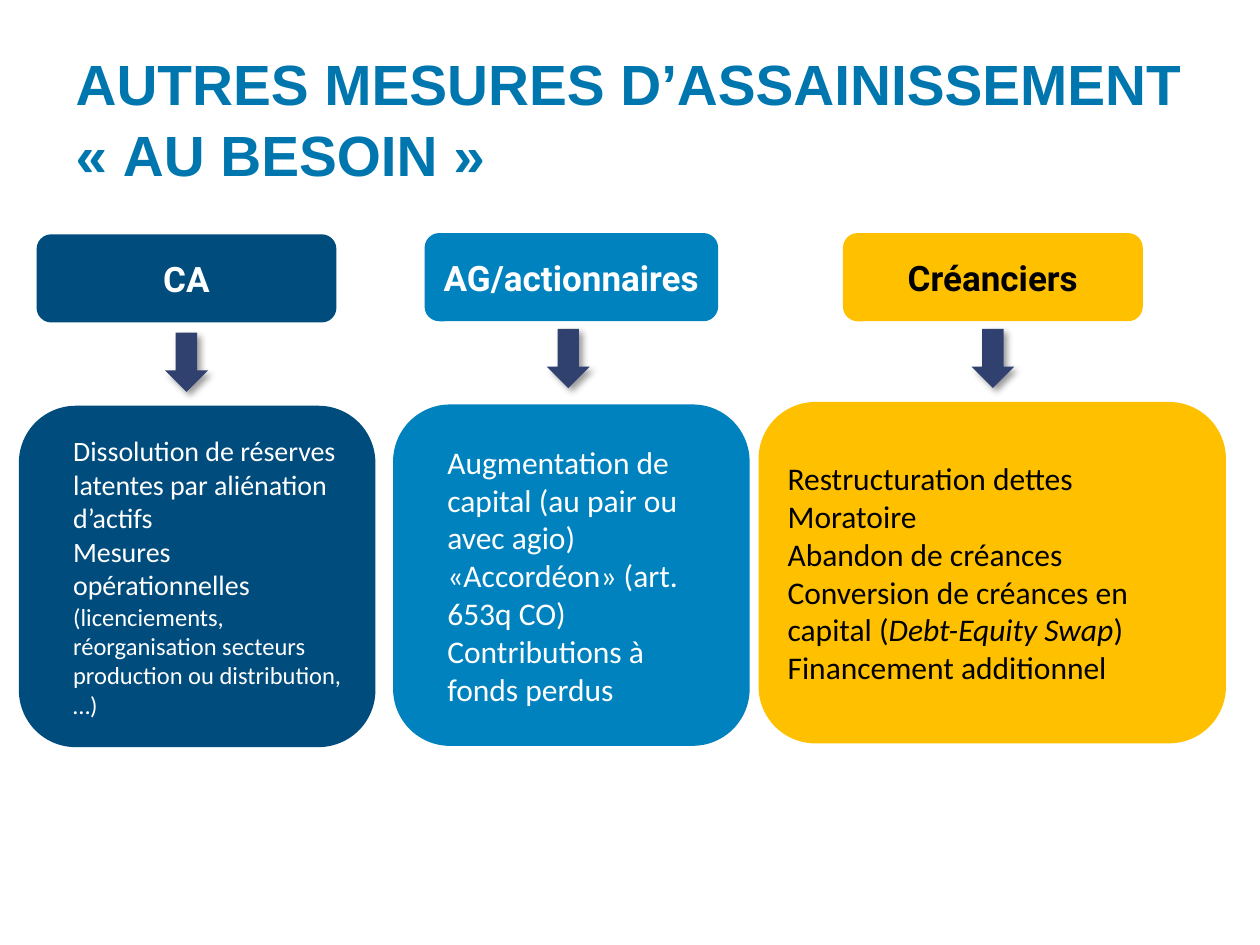
from lxml.etree import SubElement
from pptx import Presentation
from pptx.dml.color import RGBColor
from pptx.enum.shapes import MSO_SHAPE as Shape
from pptx.enum.text import MSO_ANCHOR as Anchor, MSO_AUTO_SIZE as AutoSize, PP_ALIGN as Align
from pptx.oxml.ns import qn
from pptx.util import Inches, Pt

COLORS = {"title": "0076AF", "navy": "004C7D", "blue": "0082BE", "gold": "FFC000",
          "arrow": "30406F", "white": "FFFFFF", "black": "000000"}


class SlideBuilder:
    """Holds the style and the current slide, and draws each kind of element."""

    def __init__(self, deck):
        self.slide = deck.slides.add_slide(deck.slide_layouts[5])

    def style(self, font, name, size, color, bold=False):
        font.name, font.size, font.bold = name, Pt(size), bold
        font.color.rgb = RGBColor.from_string(COLORS[color])

    def title(self, text, left, top, width, height):
        box = self.slide.shapes.title
        box.left, box.top, box.width, box.height = map(Inches, (left, top, width, height))
        frame = box.text_frame
        frame.text = text
        frame.word_wrap, frame.auto_size = True, AutoSize.NONE
        frame.vertical_anchor = Anchor.MIDDLE
        para = frame.paragraphs[0]
        para.alignment, para.line_spacing = Align.LEFT, 1.05
        self.style(para.runs[0].font, "Arial", 32.4, "title", bold=True)

    def shape(self, kind, fill, left, top, width, height):
        shape = self.slide.shapes.add_shape(kind, *map(Inches, (left, top, width, height)))
        shape.fill.solid()
        shape.fill.fore_color.rgb = RGBColor.from_string(COLORS[fill])
        shape.line.fill.background()
        shape.shadow.inherit = False
        shape.text_frame.word_wrap = True
        shape.text_frame.vertical_anchor = Anchor.MIDDLE
        return shape

    def header(self, text, fill, color, *place):
        box = self.shape(Shape.ROUNDED_RECTANGLE, fill, *place)
        box.text_frame.text = text
        para = box.text_frame.paragraphs[0]
        para.alignment = Align.CENTER
        self.style(para.runs[0].font, "Roboto", 20, color, bold=True)

    def arrow(self, left, top):
        arrow = self.shape(Shape.DOWN_ARROW, "arrow", left, top, 0.34, 0.47)
        effects = arrow.element.spPr.find(qn("a:effectLst"))
        shadow = SubElement(effects, qn("a:outerShdw"), blurRad=str(Pt(4)), dist=str(Pt(3)),
                            dir="2700000", algn="tl", rotWithShape="0")
        color = SubElement(shadow, qn("a:srgbClr"), val=COLORS["black"])
        SubElement(color, qn("a:alpha"), val="40000")

    def measures(self, items, fill, color, indent, *place):
        frame = self.shape(Shape.ROUNDED_RECTANGLE, fill, *place).text_frame
        for index, (size, *parts) in enumerate(items):
            para = frame.add_paragraph() if index else frame.paragraphs[0]
            para.alignment = Align.LEFT
            para._p.get_or_add_pPr().set("marL", str(Inches(indent)))
            for position, part in enumerate(parts):
                span = para.add_run()
                span.text = part
                self.style(span.font, "Calibri", size, color)
                span.font.italic = position == 1


def main():
    deck = Presentation()
    deck.slide_width, deck.slide_height = Inches(10), Inches(7.5)
    builder = SlideBuilder(deck)
    builder.title("AUTRES MESURES D’ASSAINISSEMENT «\u00a0AU BESOIN\u00a0»", 0.5, 0.3, 9, 1.25)

    builder.header("CA", "navy", "white", 0.29, 1.86, 2.38, 0.7)
    builder.header("AG/actionnaires", "blue", "white", 3.37, 1.85, 2.33, 0.7)
    builder.header("Créanciers", "gold", "black", 6.69, 1.85, 2.38, 0.7)

    for left, top in ((1.31, 2.64), (4.34, 2.61), (7.71, 2.61)):
        builder.arrow(left, top)

    builder.measures([
        (16, "Dissolution de réserves latentes par aliénation d’actifs"),
        (16, "Mesures opérationnelles"),
        (14, "(licenciements, réorganisation secteurs production ou distribution, …)"),
    ], "navy", "white", 0.2, 0.15, 3.22, 2.83, 2.71)
    builder.measures([
        (18, "Augmentation de capital (au pair ou avec agio)"),
        (18, "«Accordéon» (art. 653q CO)"),
        (18, "Contributions à fonds perdus"),
    ], "blue", "white", 0.2, 3.12, 3.21, 2.83, 2.71)
    builder.measures([
        (18, "Restructuration dettes"),
        (18, "Moratoire"),
        (18, "Abandon de créances"),
        (18, "Conversion de créances en capital (", "Debt-Equity Swap", ")"),
        (18, "Financement additionnel"),
    ], "gold", "black", 0, 6.02, 3.19, 3.71, 2.71)

    deck.save("out.pptx")


if __name__ == "__main__":
    main()
